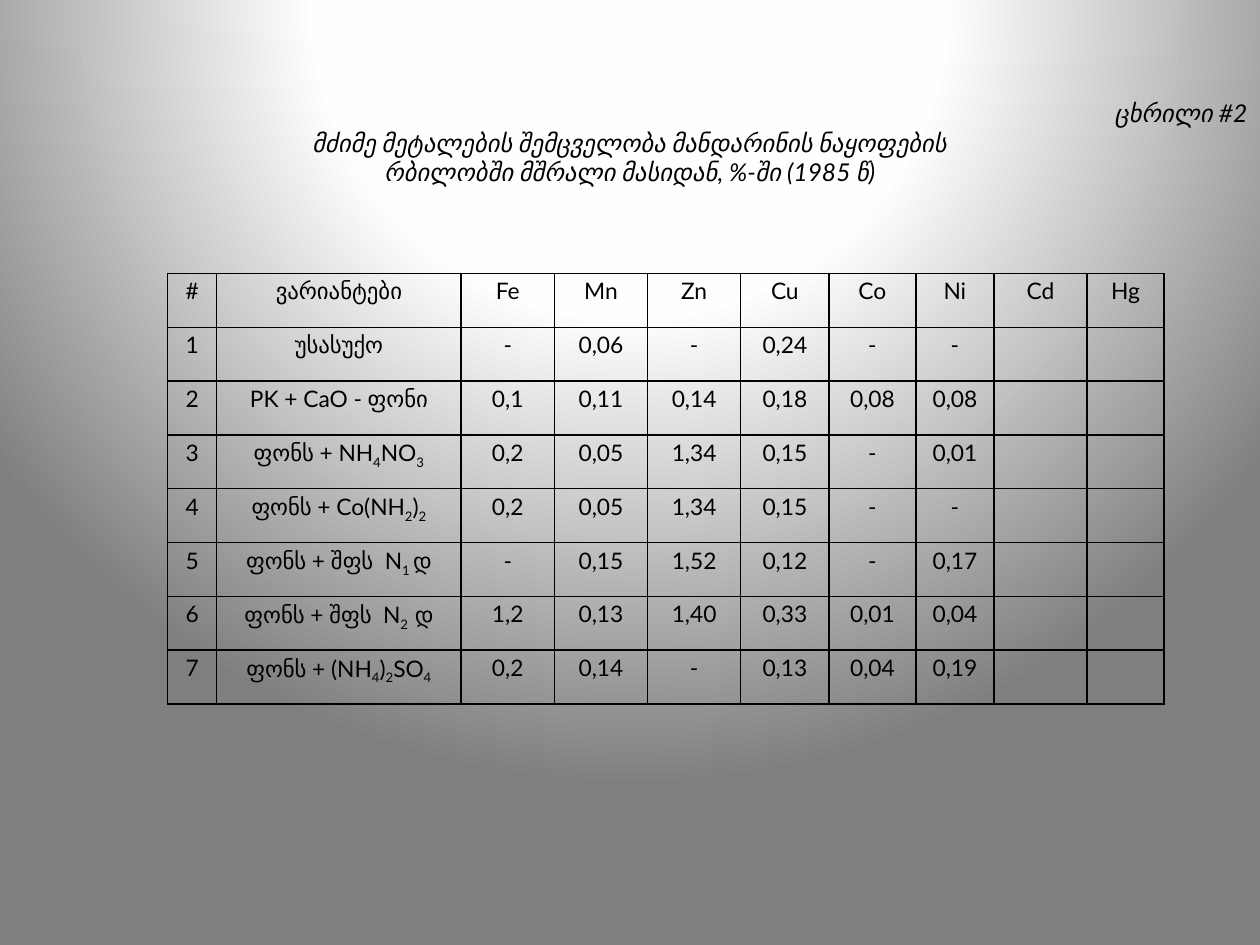
from pptx import Presentation
from pptx.dml.color import RGBColor
from pptx.enum.text import MSO_ANCHOR, MSO_AUTO_SIZE, PP_ALIGN
from pptx.oxml import parse_xml
from pptx.oxml.ns import nsdecls
from pptx.util import Inches, Pt

COLORS = {"text": "000000", "border": "000000", "center": "FFFFFF",
          "glow": "FEFEFE", "edge": "7F7F7F"}
FONT = "Lato"


def add_run(p, text, size, italic=False, subscript=False):
    r = p.add_run()
    r.text = text
    r.font.name = FONT
    r.font.size = Pt(size)
    r.font.bold = False
    r.font.italic = italic
    r.font.color.rgb = RGBColor.from_string(COLORS["text"])
    if subscript:
        r.font._element.set("baseline", "-25000")


def add_borders(cell):
    tcPr = cell._tc.get_or_add_tcPr()
    for i, side in enumerate(("lnL", "lnR", "lnT", "lnB")):
        tcPr.insert(i, parse_xml(
            f'<a:{side} {nsdecls("a")} w="{Pt(1)}"><a:solidFill>'
            f'<a:srgbClr val="{COLORS["border"]}"/></a:solidFill></a:{side}>'))


prs = Presentation()
prs.slide_width, prs.slide_height = Inches(10), Inches(7.5)
s = prs.slides.add_slide(prs.slide_layouts[5])

stops = "".join(
    f'<a:gs pos="{pos * 1000}"><a:srgbClr val="{COLORS[name]}"/></a:gs>'
    for pos, name in ((0, "center"), (40, "glow"), (100, "edge")))
s._element.cSld.insert(0, parse_xml(
    f'<p:bg {nsdecls("p", "a")}><p:bgPr><a:gradFill rotWithShape="1">'
    f'<a:gsLst>{stops}</a:gsLst><a:path path="circle">'
    '<a:fillToRect l="50000" t="-80000" r="50000" b="180000"/></a:path>'
    '</a:gradFill><a:effectLst/></p:bgPr></p:bg>'))

title = s.shapes.title
title.left, title.top = Inches(0), Inches(0.25)
title.width, title.height = Inches(10), Inches(1.28)
tf = title.text_frame
tf.word_wrap = True
tf.auto_size = MSO_AUTO_SIZE.NONE
tf.vertical_anchor = MSO_ANCHOR.BOTTOM
title_lines = [
    ("ცხრილი #2", PP_ALIGN.RIGHT),
    ("მძიმე მეტალების შემცველობა მანდარინის ნაყოფების", PP_ALIGN.CENTER),
    ("რბილობში მშრალი მასიდან, %-ში (1985 წ)", PP_ALIGN.CENTER),
]
for i, (text, align) in enumerate(title_lines):
    p = tf.paragraphs[0] if i == 0 else tf.add_paragraph()
    p.alignment = align
    add_run(p, text, 14, italic=True)

# Text between bars alternates between baseline and subscript.
rows = [
    ["#", "ვარიანტები", "Fe", "Mn", "Zn", "Cu", "Co", "Ni", "Cd", "Hg"],
    ["1", "უსასუქო", "-", "0,06", "-", "0,24", "-", "-", "", ""],
    ["2", "PK + CaO - ფონი", "0,1", "0,11", "0,14", "0,18", "0,08", "0,08", "", ""],
    ["3", "ფონს + NH|4|NO|3", "0,2", "0,05", "1,34", "0,15", "-", "0,01", "", ""],
    ["4", "ფონს + Co(NH|2|)|2", "0,2", "0,05", "1,34", "0,15", "-", "-", "", ""],
    ["5", "ფონს + შფს  N|1 |დ", "-", "0,15", "1,52", "0,12", "-", "0,17", "", ""],
    ["6", "ფონს + შფს  N|2  |დ", "1,2", "0,13", "1,40", "0,33", "0,01", "0,04", "", ""],
    ["7", "ფონს + (NH|4|)|2|SO|4", "0,2", "0,14", "-", "0,13", "0,04", "0,19", "", ""],
]
col_widths = [0.39, 1.94, 0.74, 0.74, 0.74, 0.7, 0.69, 0.62, 0.74, 0.61]
table = s.shapes.add_table(len(rows), len(col_widths), Inches(1.33), Inches(2.17),
                           Inches(sum(col_widths)), Inches(3.42)).table
table.first_row = False
table.horz_banding = False
for col, width in zip(table.columns, col_widths):
    col.width = Inches(width)

for i, row in enumerate(rows):
    for j, text in enumerate(row):
        cell = table.cell(i, j)
        cell.fill.background()
        add_borders(cell)
        cell.margin_left = cell.margin_right = Inches(0.07)
        cell.margin_top = cell.margin_bottom = Inches(0)
        p = cell.text_frame.paragraphs[0]
        p.alignment = PP_ALIGN.CENTER
        p.line_spacing = 1.15
        if text:
            for k, part in enumerate(text.split("|")):
                add_run(p, part, 13, subscript=k % 2 == 1)

prs.save("out.pptx")
